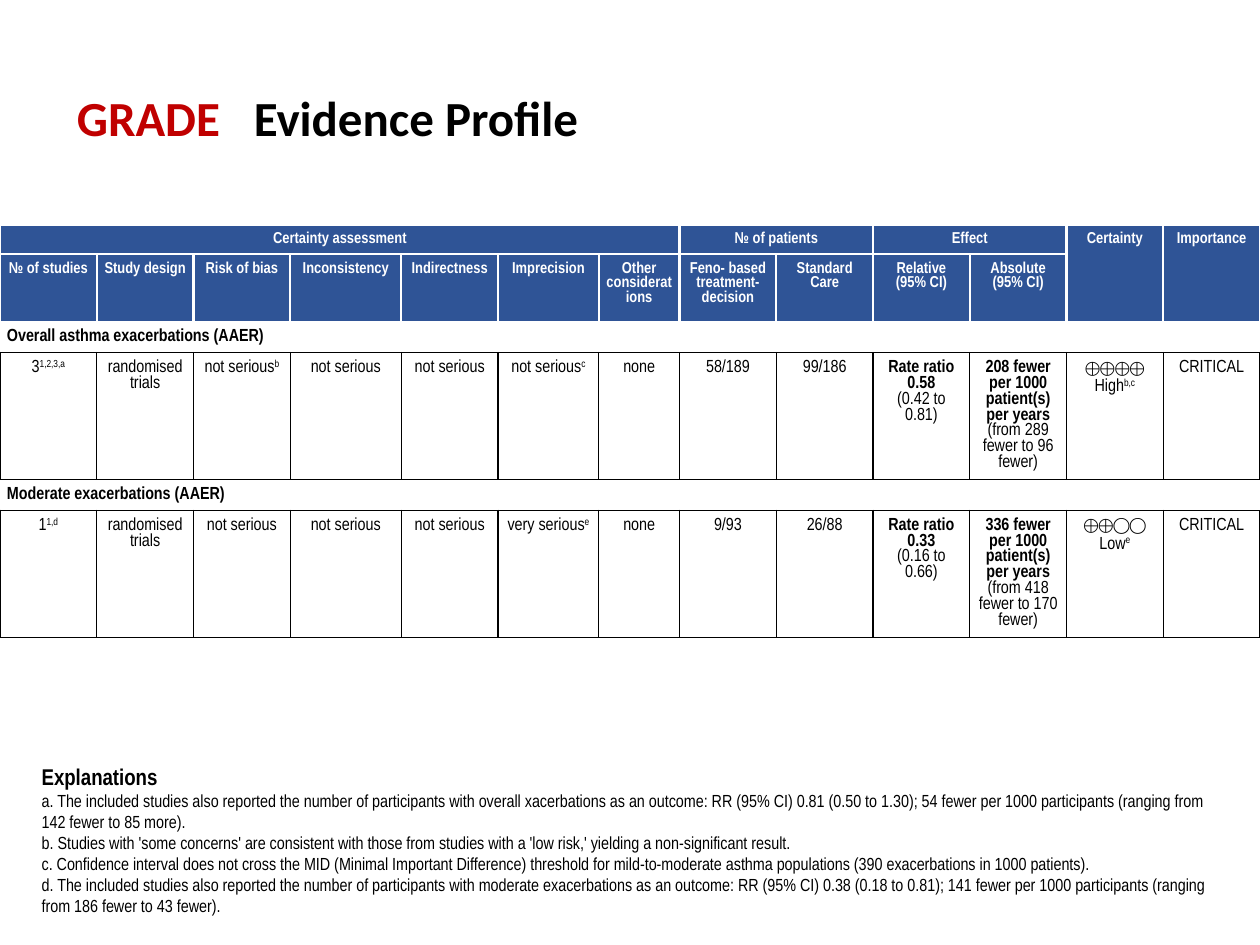
import pptx
import pptx.dml.color
import pptx.enum.text
import pptx.oxml.ns
import pptx.util
from lxml import etree
from pptx.util import Cm, Pt

BLACK, WHITE, RED, BLUE = "000000", "FFFFFF", "C00000", "2F5496"
NARROW = "Arial Narrow"
SUPER = "super"
BOLD = "bold"
SYMBOL = "symbol"

COLUMN_WIDTHS = [1.95, 1.95, 1.95, 2.24, 1.95, 2.03, 1.63] + [1.95] * 6
ROW_HEIGHTS = [0.58, 1.36, 0.62, 2.56, 0.6, 2.56]

# (row, column, rows spanned, columns spanned, heading)
GROUP_HEADINGS = [
    (0, 0, 1, 7, "Certainty assessment"),
    (0, 7, 1, 2, "№ of patients"),
    (0, 9, 1, 2, "Effect"),
    (0, 11, 2, 1, "Certainty"),
    (0, 12, 2, 1, "Importance"),
]
COLUMN_HEADINGS = [
    "№ of studies", "Study design", "Risk of bias", "Inconsistency",
    "Indirectness", "Imprecision", "Other considerations",
    "Feno- based treatment-decision", "Standard Care",
    "Relative\n(95% CI)", "Absolute\n(95% CI)",
]


def plain(*texts):
    return [[(text,)] for text in texts]


def noted(text, note):
    """Runs of a text followed by a superscript footnote mark."""
    return [(text,), (note, SUPER)]


def effect(estimate, interval):
    return [(estimate + "\n", BOLD), (interval,)]


def certainty(symbols, level, note):
    return [(symbols + "\n", SYMBOL)] + noted(level, note)


OUTCOMES = [
    ("Overall asthma exacerbations (AAER)", [
        noted("3", "1,2,3,a"), *plain("randomised trials"),
        noted("not serious", "b"), *plain("not serious", "not serious"),
        noted("not serious", "c"), *plain("none", "58/189", "99/186"),
        effect("Rate ratio 0.58", "(0.42 to 0.81)"),
        effect("208 fewer per 1000 patient(s) per years",
               "(from 289 fewer to 96 fewer)"),
        certainty("⨁⨁⨁⨁", "High", "b,c"), *plain("CRITICAL"),
    ]),
    ("Moderate exacerbations (AAER)", [
        noted("1", "1,d"), *plain("randomised trials"),
        *plain("not serious", "not serious", "not serious"),
        noted("very serious", "e"), *plain("none", "9/93", "26/88"),
        effect("Rate ratio 0.33", "(0.16 to 0.66)"),
        effect("336 fewer per 1000 patient(s) per years",
               "(from 418 fewer to 170 fewer)"),
        certainty("⨁⨁◯◯", "Low", "e"), *plain("CRITICAL"),
    ]),
]
EXPLANATIONS = [
    "a. The included studies also reported the number of participants with overall "
    "xacerbations as an outcome: RR (95% CI) 0.81 (0.50 to 1.30); 54 fewer per 1000 "
    "participants (ranging from 142 fewer to 85 more).",
    "b. Studies with 'some concerns' are consistent with those from studies with a "
    "'low risk,' yielding a non-significant result.",
    "c. Confidence interval does not cross the MID (Minimal Important Difference) "
    "threshold for mild-to-moderate asthma populations (390 exacerbations in 1000 "
    "patients).",
    "d. The included studies also reported the number of participants with moderate "
    "exacerbations as an outcome: RR (95% CI) 0.38 (0.18 to 0.81); 141 fewer per 1000 "
    "participants (ranging from 186 fewer to 43 fewer).",
]


def rgb(value):
    return pptx.dml.color.RGBColor.from_string(value)


def write(paragraph, text, size, color, bold=False, name=NARROW, raised=False):
    """Add text in one style, each newline becoming a line break."""
    for index, line in enumerate(text.split("\n")):
        if index:
            paragraph.add_line_break()
        if not line:
            continue
        run = paragraph.add_run()
        run.text = line
        run.font.name, run.font.size, run.font.bold = name, Pt(size), bold
        run.font.color.rgb = rgb(color)
        if raised:
            run.font._element.set("baseline", "30000")


def set_borders(cell, left, right, top, bottom):
    """Draw each side as (colour, points), or leave it empty for None."""
    properties = cell._tc.get_or_add_tcPr()
    sides = zip(("lnL", "lnR", "lnT", "lnB"), (left, right, top, bottom))
    for position, (tag, side) in enumerate(sides):
        line = etree.Element(pptx.oxml.ns.qn("a:" + tag))
        properties.insert(position, line)
        if side is None:
            etree.SubElement(line, pptx.oxml.ns.qn("a:noFill"))
            continue
        color, width = side
        line.set("w", str(Pt(width)))
        fill = etree.SubElement(line, pptx.oxml.ns.qn("a:solidFill"))
        etree.SubElement(fill, pptx.oxml.ns.qn("a:srgbClr"), val=color)


class EvidenceSlide:
    header_line = (WHITE, 1.5)
    body_line = (BLACK, 0.75)
    side_inset = Cm(0.14)
    top_inset = Cm(0.15)

    def __init__(self, presentation):
        self.slide = presentation.slides.add_slide(presentation.slide_layouts[6])

    def text_box(self, left, top, width, height):
        """Add a wrapping text box and return its first paragraph."""
        box = self.slide.shapes.add_textbox(Cm(left), Cm(top), Cm(width), Cm(height))
        box.text_frame.word_wrap = True
        return box.text_frame.paragraphs[0]

    def title(self, accent, rest):
        paragraph = self.text_box(1.3, 1.63, 13.3, 1.45)
        tabs = etree.SubElement(paragraph._p.get_or_add_pPr(), pptx.oxml.ns.qn("a:tabLst"))
        etree.SubElement(tabs, pptx.oxml.ns.qn("a:tab"), pos=str(Cm(3.57)), algn="l")
        write(paragraph, accent + "\t", 28, RED, True, "Calibri")
        write(paragraph, rest, 28, BLACK, True, "Calibri")

    def explanations(self, heading, notes):
        paragraph = self.text_box(0.59, 15.25, 24.4, 3.38)
        write(paragraph, heading + "\n", 13, BLACK, True)
        write(paragraph, "\n".join(notes), 10, BLACK)

    def table(self, left, top):
        frame = self.slide.shapes.add_table(
            len(ROW_HEIGHTS), len(COLUMN_WIDTHS), Cm(left), Cm(top),
            Cm(sum(COLUMN_WIDTHS)), Cm(sum(ROW_HEIGHTS)))
        table = frame.table
        table.first_row = table.horz_banding = False
        for column, width in zip(table.columns, COLUMN_WIDTHS):
            column.width = Cm(width)
        for row, height in zip(table.rows, ROW_HEIGHTS):
            row.height = Cm(height)
        return table

    def fill_cell(self, cell, runs, size, color, bold=False, centred=True):
        cell.margin_left = cell.margin_right = self.side_inset
        cell.margin_top = cell.margin_bottom = self.top_inset
        paragraph = cell.text_frame.paragraphs[0]
        # Slightly tight, still clear of overlap
        paragraph.line_spacing = 0.98
        if centred:
            paragraph.alignment = pptx.enum.text.PP_ALIGN.CENTER
        for text, *style in runs:
            name = "Times New Roman" if SYMBOL in style else NARROW
            write(paragraph, text, size, color, bold or BOLD in style, name,
                  SUPER in style)

    def paint(self, table, row, fill, *borders):
        for cell in table.rows[row].cells:
            cell.fill.solid()
            cell.fill.fore_color.rgb = rgb(fill)
            set_borders(cell, *borders)

    def header(self, table):
        for row in (0, 1):
            self.paint(table, row, BLUE, *[self.header_line] * 4)
        headings = GROUP_HEADINGS + [
            (1, column, 1, 1, text) for column, text in enumerate(COLUMN_HEADINGS)]
        for row, column, height, width, text in headings:
            cell = table.cell(row, column)
            if height * width > 1:
                cell.merge(table.cell(row + height - 1, column + width - 1))
            self.fill_cell(cell, [(text,)], 9, WHITE, True)

    def outcome(self, table, row, name, results):
        """Fill a full-width outcome row and the row of results below it."""
        above = self.header_line if row == 2 else self.body_line
        self.paint(table, row, WHITE, None, None, above, self.body_line)
        table.cell(row, 0).merge(table.cell(row, len(COLUMN_WIDTHS) - 1))
        self.fill_cell(table.cell(row, 0), [(name,)], 10, BLACK, True, centred=False)
        self.paint(table, row + 1, WHITE, *[self.body_line] * 4)
        for column, runs in enumerate(results):
            self.fill_cell(table.cell(row + 1, column), runs, 10, BLACK)


def main():
    presentation = pptx.Presentation()
    presentation.slide_width, presentation.slide_height = Cm(25.4), Cm(19.05)
    profile = EvidenceSlide(presentation)
    table = profile.table(0, 4.53)
    profile.header(table)
    for index, (name, results) in enumerate(OUTCOMES):
        profile.outcome(table, 2 + 2 * index, name, results)
    profile.explanations("Explanations", EXPLANATIONS)
    profile.title("GRADE", "Evidence Profile")
    presentation.save("out.pptx")


if __name__ == "__main__":
    main()
